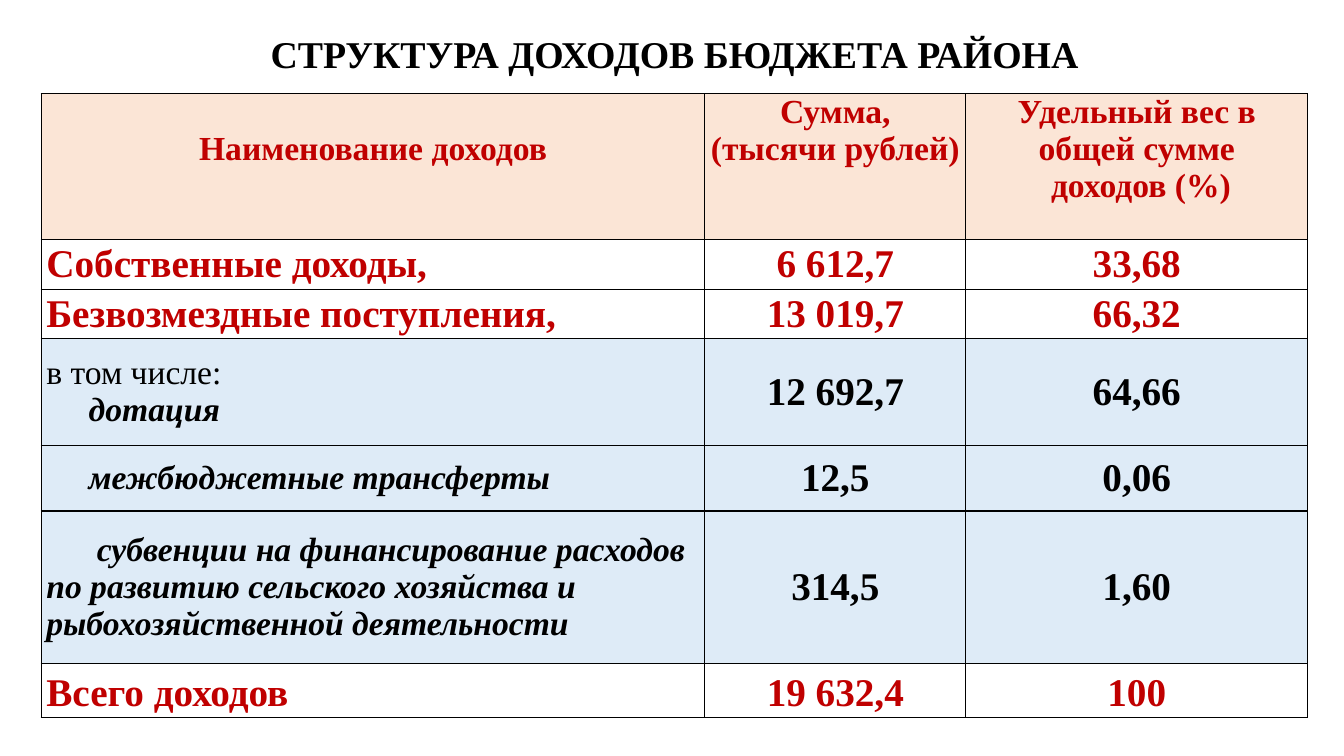
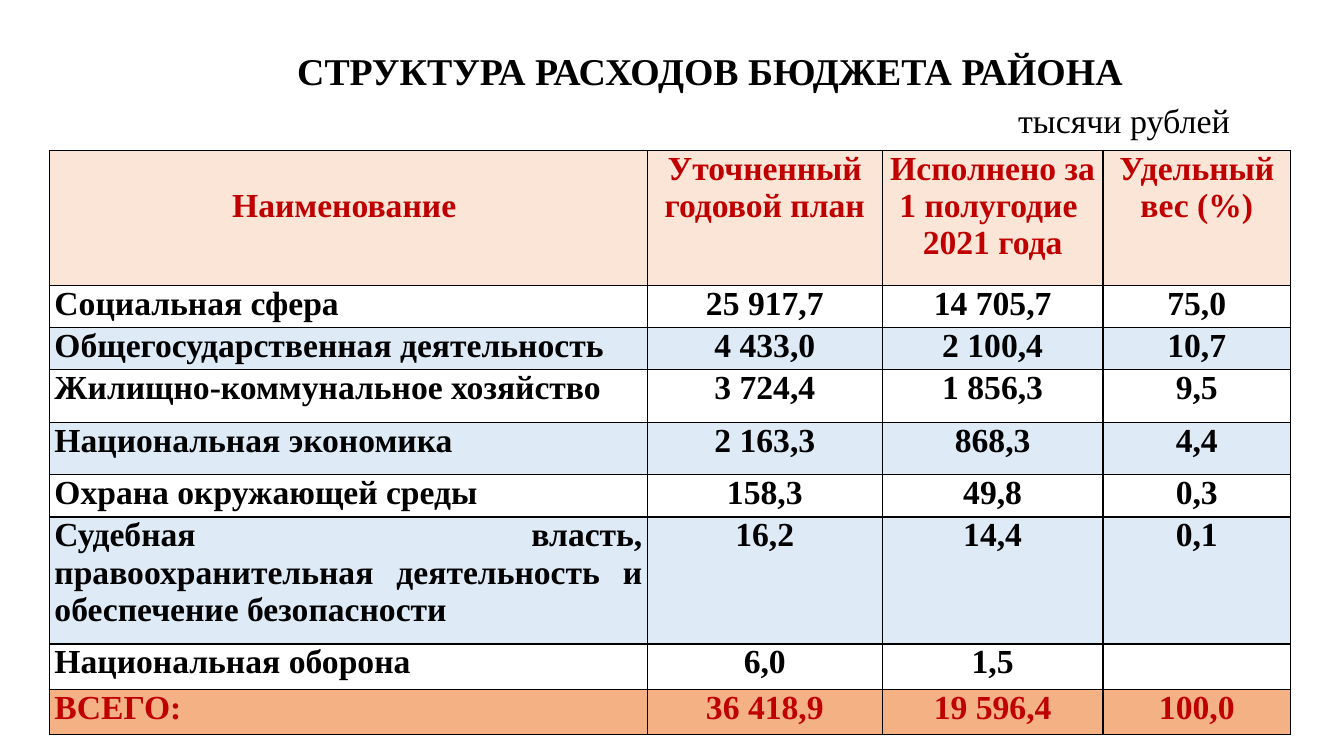
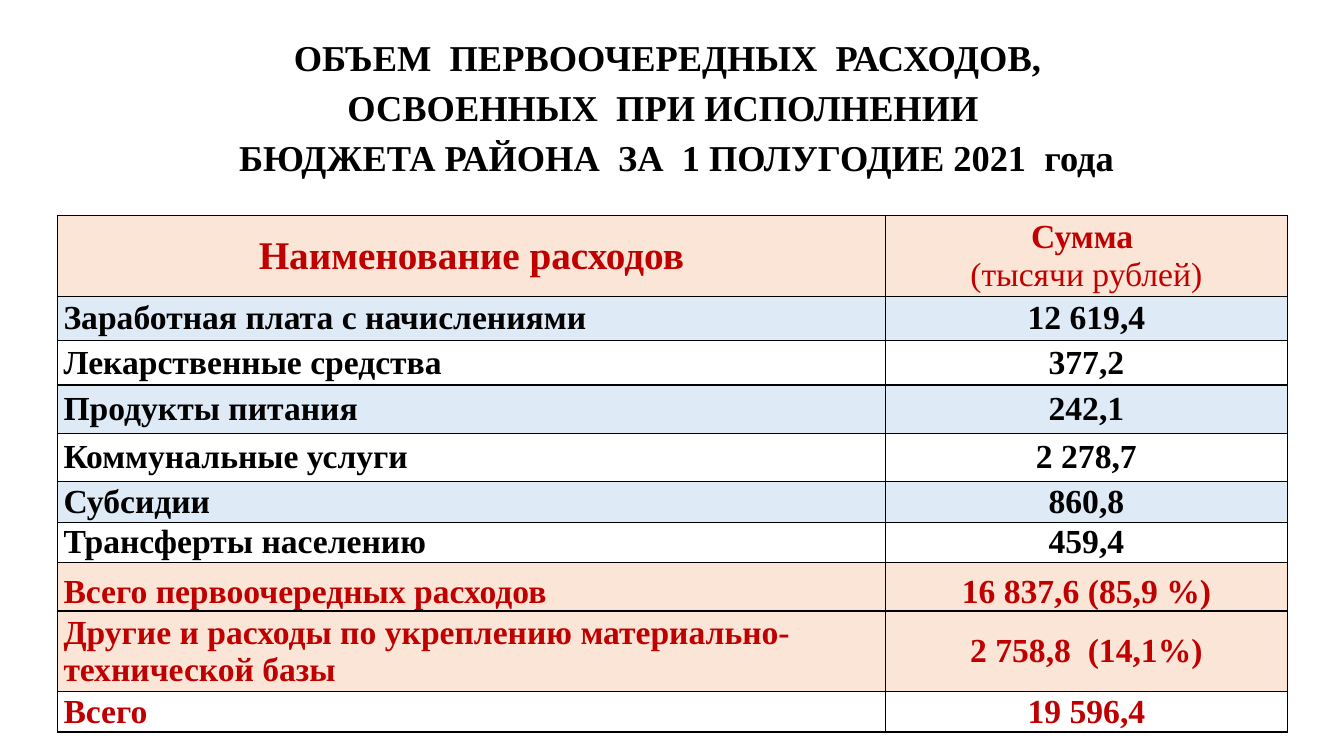
"""Build three slides with budget tables: income, expenses and priority expenses."""
import pptx
import pptx.util
import pptx.dml.color
import pptx.enum.text
import pptx.oxml.ns
import lxml.etree

Inches = pptx.util.Inches
Pt = pptx.util.Pt
ALIGN = pptx.enum.text.PP_ALIGN
ANCHOR = pptx.enum.text.MSO_ANCHOR

FONT = "Times New Roman"
BLACK, RED, WHITE = "000000", "C00000", "FFFFFF"
PEACH, ORANGE, BLUE = "FBE5D6", "F4B183", "DEEBF7"

BASE = {"size": 24, "color": BLACK, "bold": True, "italic": False, "align": ALIGN.CENTER,
        "anchor": ANCHOR.MIDDLE, "spacing": 1, "before": 0, "indent": 0, "fill": WHITE}
TITLE = {**BASE, "size": 27, "spacing": 0.9}
HEADER = {"fill": PEACH, "color": RED, "label_align": ALIGN.CENTER}
TOP_HEADER = {**HEADER, "anchor": ANCHOR.TOP, "label_top": 0.37}
INCOME = {"size": 28, "color": RED}
INCOME_PART = {"size": 28, "fill": BLUE}
INCOME_TOTAL = {**INCOME, "spacing": 1.15}
EXPENSE = {"anchor": ANCHOR.TOP, "label_align": ALIGN.JUSTIFY}
EXPENSE_BLUE = {**EXPENSE, "fill": BLUE}
EXPENSE_TOTAL = {**EXPENSE, "fill": ORANGE, "color": RED}
BANDED = {"fill": BLUE}
SUBTOTAL = {"fill": PEACH, "color": RED}


def part(text, indent):
    """Return an italic line with a first-line indent."""
    return text, {"size": 24, "italic": True, "indent": indent}


SLIDES = [
    {
        "title": ["СТРУКТУРА ДОХОДОВ БЮДЖЕТА РАЙОНА"],
        "title_box": (0.94, 0.22, 11.5, 0.68),
        "table_at": (0.41, 0.93),
        "columns": [6.58, 2.59, 3.39],
        "inset": 0.05,
        "rows": [
            (1.45, TOP_HEADER, [["Наименование доходов"], ["Сумма,", "(тысячи рублей)"],
                                ["Удельный вес в", "общей сумме", " доходов (%)"]]),
            (0.49, INCOME, [["Собственные доходы,"], ["6 612,7"], ["33,68"]]),
            (0.49, INCOME, [["Безвозмездные поступления,"], ["13 019,7"], ["66,32"]]),
            (1.06, INCOME_PART, [[("в том числе:", {"size": 24, "bold": False}),
                                  part("дотация", 0.42)], ["12 692,7"], ["64,66"]]),
            (0.65, INCOME_PART, [[part("межбюджетные трансферты", 0.42)], ["12,5"], ["0,06"]]),
            (1.51, INCOME_PART, [[part("субвенции на финансирование расходов по развитию сельского "
                                       "хозяйства и рыбохозяйственной деятельности", 0.5)],
                                 ["314,5"], ["1,60"]]),
            (0.54, INCOME_TOTAL, [["Всего доходов"], ["19 632,4"], ["100"]]),
        ],
    },
    {
        "title": [("СТРУКТУРА РАСХОДОВ БЮДЖЕТА РАЙОНА", {"align": ALIGN.LEFT, "indent": 1.74}),
                  ("тысячи рублей", {"align": ALIGN.LEFT, "indent": 8.89, "size": 24.3,
                                     "bold": False, "before": 8})],
        "title_box": (1.11, 0.29, 11.5, 1.2),
        "title_top": 0.19,
        "table_at": (0.49, 1.49),
        "columns": [5.93, 2.33, 2.19, 1.86],
        "inset": 0.05,
        "rows": [
            (1.34, TOP_HEADER, [["Наименование "], ["Уточненный годовой план"],
                                ["Исполнено за 1 полугодие  2021 года"], ["Удельный вес (%)"]]),
            (0.42, EXPENSE, [["Социальная сфера"], ["25 917,7"], ["14 705,7"], ["75,0"]]),
            (0.42, EXPENSE_BLUE, [["Общегосударственная деятельность"],
                                  ["4 433,0"], ["2 100,4"], ["10,7"]]),
            (0.52, EXPENSE, [["Жилищно-коммунальное хозяйство "],
                             ["3 724,4"], ["1 856,3"], ["9,5"]]),
            (0.52, EXPENSE_BLUE, [["Национальная экономика"], ["2 163,3"], ["868,3"], ["4,4"]]),
            (0.42, EXPENSE, [["Охрана окружающей среды"], ["158,3"], ["49,8"], ["0,3"]]),
            (1.26, EXPENSE_BLUE, [["Судебная власть, правоохранительная деятельность и "
                                   "обеспечение безопасности"], ["16,2"], ["14,4"], ["0,1"]]),
            (0.45, EXPENSE, [["Национальная оборона"], ["6,0"], ["1,5"], []]),
            (0.45, EXPENSE_TOTAL, [["ВСЕГО:"], ["36 418,9"], ["19 596,4"], ["100,0"]]),
        ],
    },
    {
        "title": [(line, {"size": 26, "spacing": 1.15}) for line in (
            "ОБЪЕМ  ПЕРВООЧЕРЕДНЫХ  РАСХОДОВ, ",
            "ОСВОЕННЫХ  ПРИ ИСПОЛНЕНИИ  ",
            " БЮДЖЕТА РАЙОНА  ЗА  1 ПОЛУГОДИЕ 2021  года")],
        "title_box": (0.92, 0.42, 11.5, 1.22),
        "table_at": (0.57, 2.14),
        "columns": [8.21, 3.99],
        "inset": 0.06,
        "rows": [
            (0.74, HEADER, [[("Наименование расходов", {"size": 28})],
                            ["Сумма ", ("(тысячи рублей)", {"bold": False})]]),
            (0.44, BANDED, [["Заработная плата с начислениями"], ["12 619,4"]]),
            (0.44, {}, [["Лекарственные средства"], ["377,2"]]),
            (0.48, BANDED, [["Продукты питания"], ["242,1"]]),
            (0.48, {}, [["Коммунальные услуги"], ["2 278,7"]]),
            (0.39, BANDED, [["Субсидии"], ["860,8"]]),
            (0.39, {}, [["Трансферты населению"], ["459,4"]]),
            (0.48, {**SUBTOTAL, "anchor": ANCHOR.BOTTOM},
             [["Всего первоочередных расходов"], ["16 837,6 (85,9 %)"]]),
            (0.78, SUBTOTAL, [["Другие и расходы по укреплению материально-технической базы"],
                              ["2 758,8  (14,1%)"]]),
            (0.38, {"color": RED}, [["Всего"], ["19 596,4"]]),
        ],
    },
]


def color(value):
    """Turn a hex string into a colour."""
    return pptx.dml.color.RGBColor.from_string(value)


def write(text_frame, lines, style):
    """Write each line as a paragraph with one run."""
    for index, line in enumerate(lines):
        text, changes = (line, {}) if isinstance(line, str) else line
        look = {**style, **changes}
        paragraph = text_frame.add_paragraph() if index else text_frame.paragraphs[0]
        paragraph.alignment = look["align"]
        paragraph.line_spacing = look["spacing"]
        paragraph.space_before = Pt(look["before"])
        if look["indent"]:
            properties = paragraph._p.get_or_add_pPr()
            properties.set("marL", "0")
            properties.set("indent", str(Inches(look["indent"])))
        run = paragraph.add_run()
        run.text = text
        run.font.name = FONT
        run.font.size = Pt(look["size"])
        run.font.bold = look["bold"]
        run.font.italic = look["italic"]
        run.font.color.rgb = color(look["color"])


def add_borders(cell):
    """Draw a thin black line on all four sides of a cell."""
    qn = pptx.oxml.ns.qn
    properties = cell._tc.get_or_add_tcPr()
    for position, side in enumerate(("a:lnL", "a:lnR", "a:lnT", "a:lnB")):
        line = lxml.etree.Element(qn(side), w=str(Pt(1)))
        fill = lxml.etree.SubElement(line, qn("a:solidFill"))
        lxml.etree.SubElement(fill, qn("a:srgbClr"), val=BLACK)
        properties.insert(position, line)


def add_title(slide, content):
    """Add the heading above the table."""
    text_box = slide.shapes.add_textbox(*map(Inches, content["title_box"]))
    text_frame = text_box.text_frame
    text_frame.word_wrap = True
    text_frame.vertical_anchor = ANCHOR.MIDDLE
    text_frame.margin_top = Inches(content.get("title_top", 0.05))
    write(text_frame, content["title"], TITLE)


def add_budget_table(slide, content):
    """Add the table with its fills, borders and text."""
    rows, columns = content["rows"], content["columns"]
    size = sum(columns), sum(row[0] for row in rows)
    frame = slide.shapes.add_table(len(rows), len(columns),
                                   *map(Inches, content["table_at"] + size))
    table = frame.table
    table.first_row = table.horz_banding = False
    for column, width in zip(table.columns, columns):
        column.width = Inches(width)
    for row, (height, changes, cells) in zip(table.rows, rows):
        row.height = Inches(height)
        for index, (cell, lines) in enumerate(zip(row.cells, cells)):
            style = {**BASE, **changes}
            if index == 0:
                style["align"] = style.get("label_align", ALIGN.LEFT)
            cell.margin_left = cell.margin_right = Inches(content["inset"])
            cell.margin_top = Inches(style.get("label_top", 0) if index == 0 else 0)
            cell.margin_bottom = 0
            cell.vertical_anchor = style["anchor"]
            cell.fill.solid()
            cell.fill.fore_color.rgb = color(style["fill"])
            add_borders(cell)
            write(cell.text_frame, lines, style)


def main():
    """Build and save the presentation."""
    presentation = pptx.Presentation()
    presentation.slide_width = Inches(13.33)
    presentation.slide_height = Inches(7.5)
    for content in SLIDES:
        slide = presentation.slides.add_slide(presentation.slide_layouts[6])
        add_title(slide, content)
        add_budget_table(slide, content)
    presentation.save("out.pptx")


if __name__ == "__main__":
    main()
